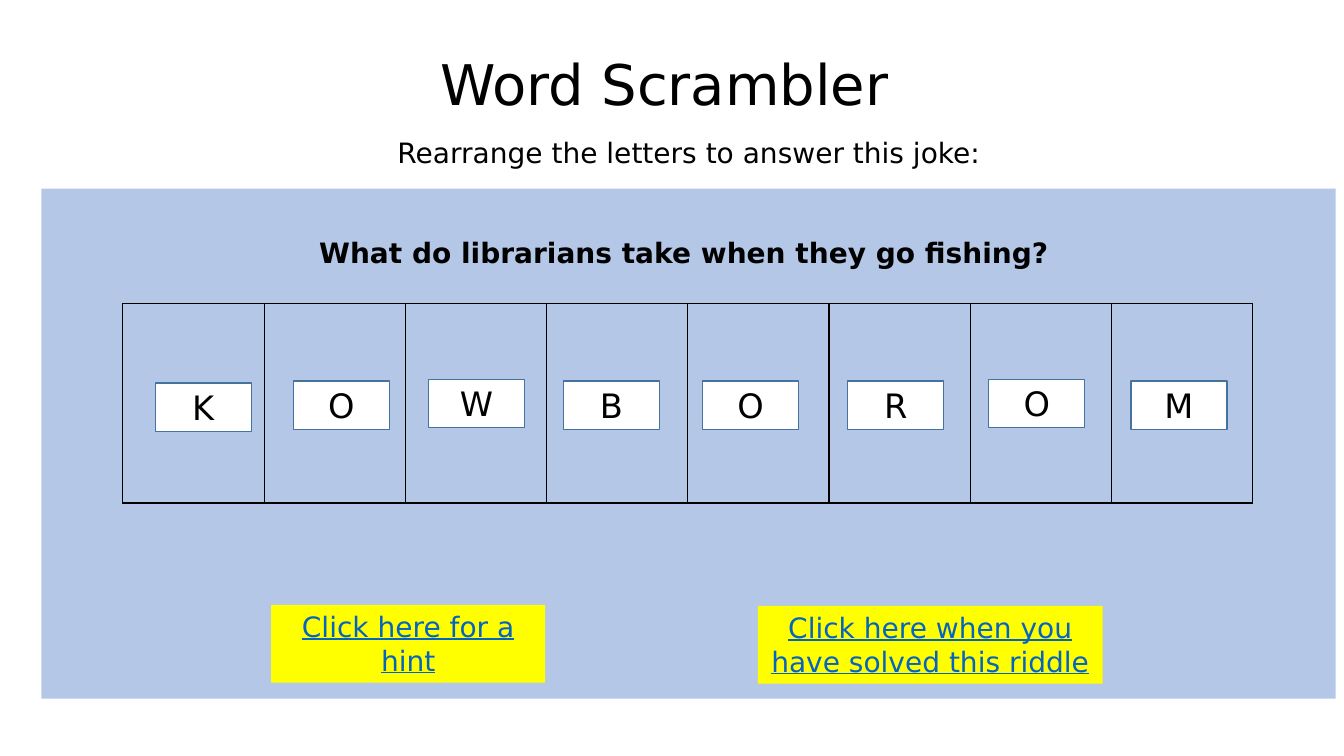
import pptx
import pptx.dml.color
import pptx.enum.shapes
import pptx.enum.text
import pptx.oxml
import pptx.oxml.ns
import pptx.util

Pt = pptx.util.Pt
COLORS = {
    "panel": "B4C7E7",
    "text": "000000",
    "button": "FFFF00",
    "link": "0563C1",
    "tile": "FFFFFF",
    "tile_line": "43739E",
    "grid": "000000",
}
# Letter, left and top of each tile, in points
TILES = [
    ("K", 110.9, 273.6),
    ("O", 209.5, 272.2),
    ("W", 306, 270.9),
    ("B", 402.5, 272.2),
    ("O", 501.8, 272.2),
    ("R", 605.5, 272.2),
    ("O", 706.3, 270.9),
    ("M", 807.8, 272.2),
]


def color(name):
    return pptx.dml.color.RGBColor.from_string(COLORS[name])


class PuzzleSlide:
    font_name = "DejaVu Sans"

    def __init__(self, presentation):
        self.slide = presentation.slides.add_slide(presentation.slide_layouts[6])

    def fill_text(self, shape, lines, size, color_name="text", underline=None, gap=0):
        """Fill a shape with centred paragraphs, given as (text, bold) pairs."""
        frame = shape.text_frame
        frame.word_wrap = True
        for index, (text, bold) in enumerate(lines):
            paragraph = frame.add_paragraph() if index else frame.paragraphs[0]
            paragraph.text = text
            paragraph.alignment = pptx.enum.text.PP_ALIGN.CENTER
            paragraph.space_before = Pt(gap if index else 0)
            font = paragraph.font
            font.name, font.size, font.bold = self.font_name, Pt(size), bold
            font.underline = underline
            font.color.rgb = color(color_name)

    def text(self, left, top, width, height, lines, size, gap=0):
        box = self.slide.shapes.add_textbox(Pt(left), Pt(top), Pt(width), Pt(height))
        self.fill_text(box, lines, size, gap=gap)

    def rectangle(self, left, top, width, height, fill, line=None):
        shape = self.slide.shapes.add_shape(
            pptx.enum.shapes.MSO_SHAPE.RECTANGLE, Pt(left), Pt(top), Pt(width), Pt(height))
        shape.shadow.inherit = False
        shape.fill.solid()
        shape.fill.fore_color.rgb = color(fill)
        if line:
            shape.line.color.rgb = color(line)
            shape.line.width = Pt(1)
        else:
            shape.line.fill.background()
        return shape

    def button(self, left, top, width, text):
        shape = self.rectangle(left, top, width, 55.7, "button")
        shape.text_frame.vertical_anchor = pptx.enum.text.MSO_ANCHOR.TOP
        self.fill_text(shape, [(text, False)], 20, "link", underline=True)

    def tile(self, letter, left, top):
        shape = self.rectangle(left, top, 68.6, 34.6, "tile", "tile_line")
        frame = shape.text_frame
        frame.margin_top = frame.margin_bottom = 0
        self.fill_text(shape, [(letter, False)], 24)

    def grid(self, left, top, width, height, columns):
        table = self.slide.shapes.add_table(
            1, columns, Pt(left), Pt(top), Pt(width), Pt(height)).table
        table.first_row = table.horz_banding = False
        for column in table.columns:
            column.width = Pt(width / columns)
        for cell in table.iter_cells():
            cell.fill.background()
            properties = cell._tc.get_or_add_tcPr()
            for index, side in enumerate(("lnL", "lnR", "lnT", "lnB")):
                border = pptx.oxml.parse_xml(
                    f'<a:{side} {pptx.oxml.ns.nsdecls("a")} w="{Pt(1)}"><a:solidFill>'
                    f'<a:srgbClr val="{COLORS["grid"]}"/></a:solidFill></a:{side}>')
                properties.insert(index, border)


def main():
    presentation = pptx.Presentation()
    presentation.slide_width, presentation.slide_height = Pt(960), Pt(540)
    puzzle = PuzzleSlide(presentation)
    puzzle.rectangle(29.5, 134.8, 924.5, 364.3, "panel")
    puzzle.text(57.6, 92.9, 869, 104.4, [
        ("Rearrange the letters to answer this joke:", False),
        ("What do librarians take when they go fishing? ", True),
    ], 20, gap=48)
    puzzle.text(77.8, 31.7, 793.4, 55.4, [("Word Scrambler", False)], 40)
    puzzle.button(541.4, 432.7, 246.2, "Click here when you have solved this riddle")
    puzzle.button(193.7, 432, 195.8, "Click here for a hint")
    puzzle.grid(87.8, 216.7, 807.2, 142.6, len(TILES))
    for letter, left, top in TILES:
        puzzle.tile(letter, left, top)
    presentation.save("out.pptx")


if __name__ == "__main__":
    main()
